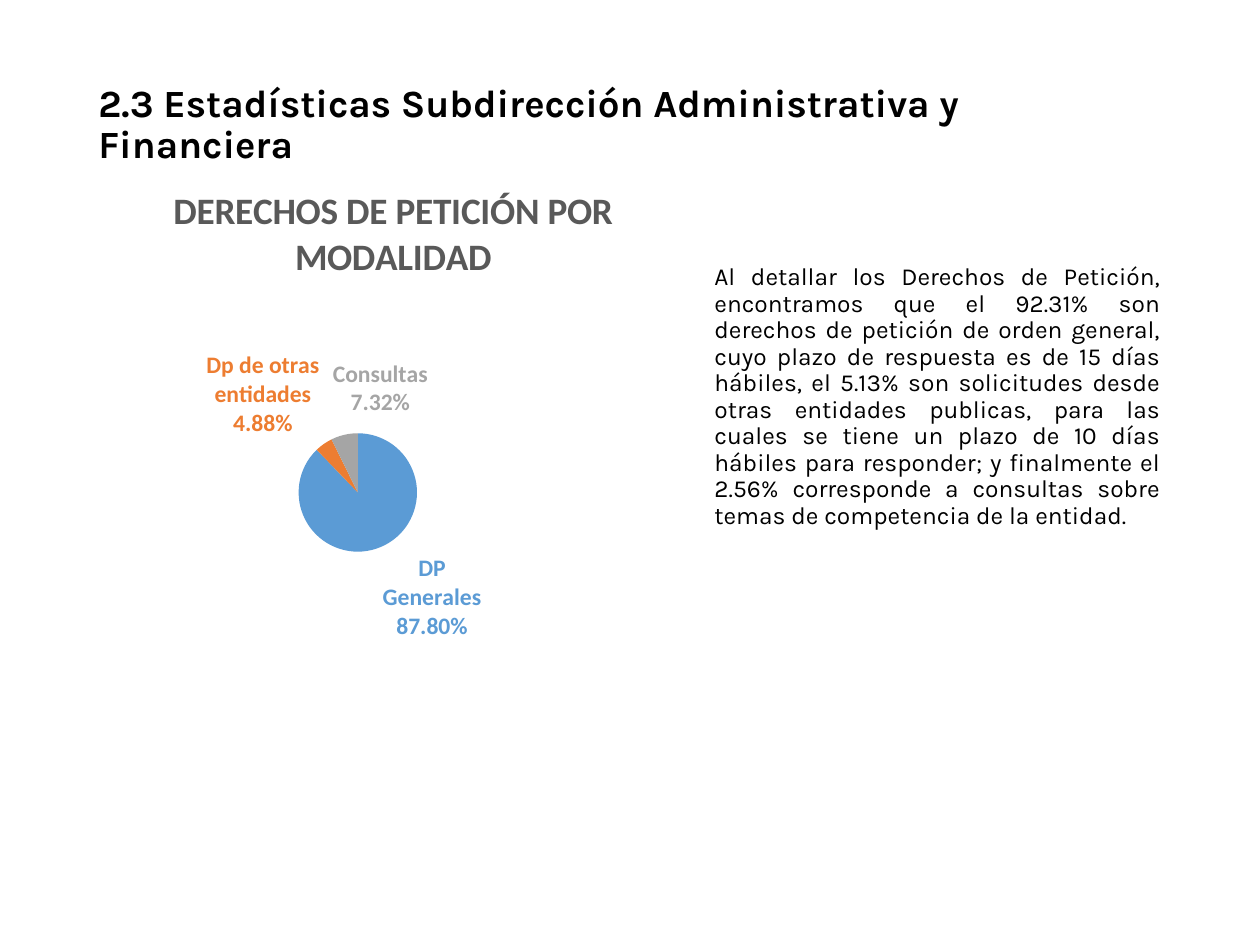
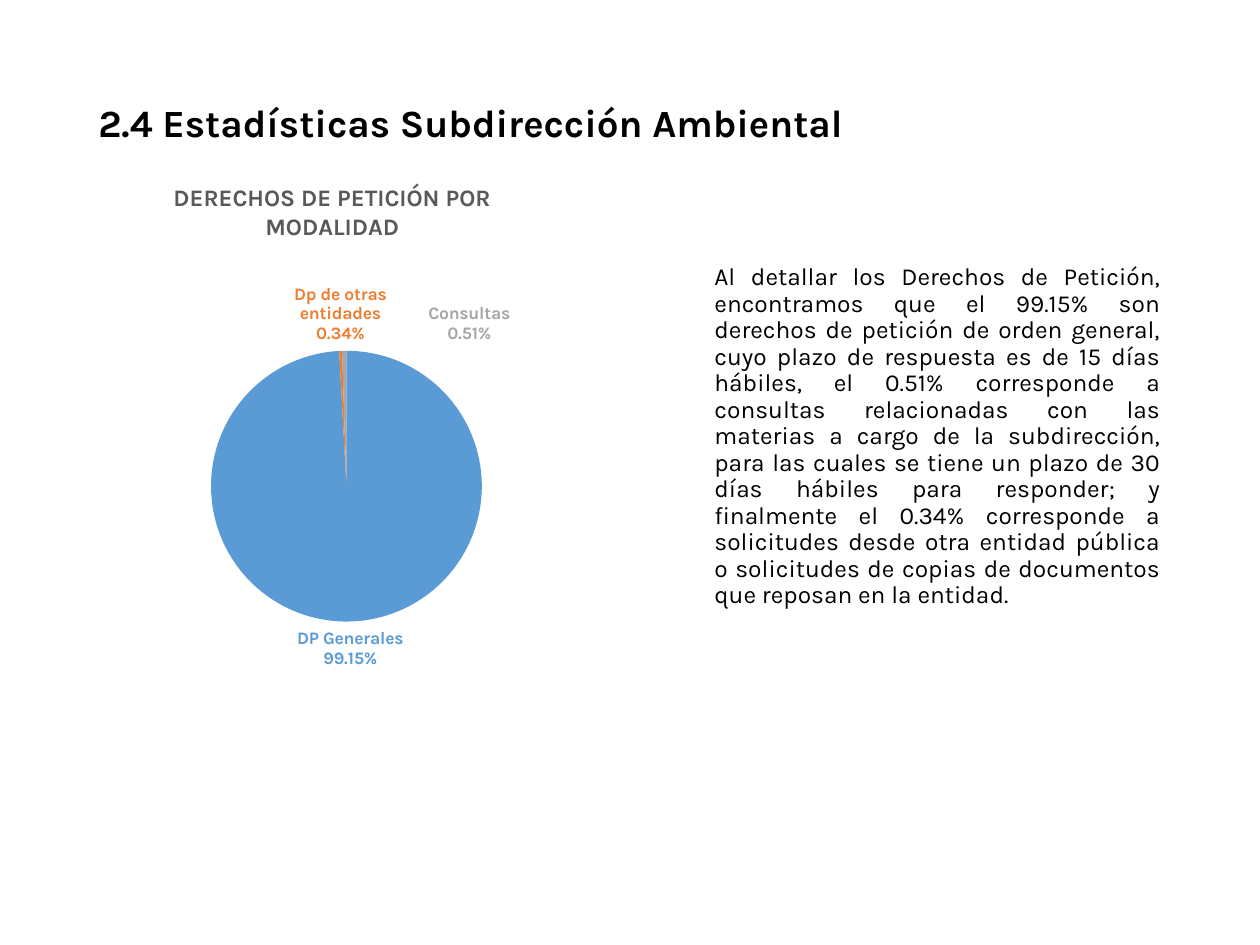
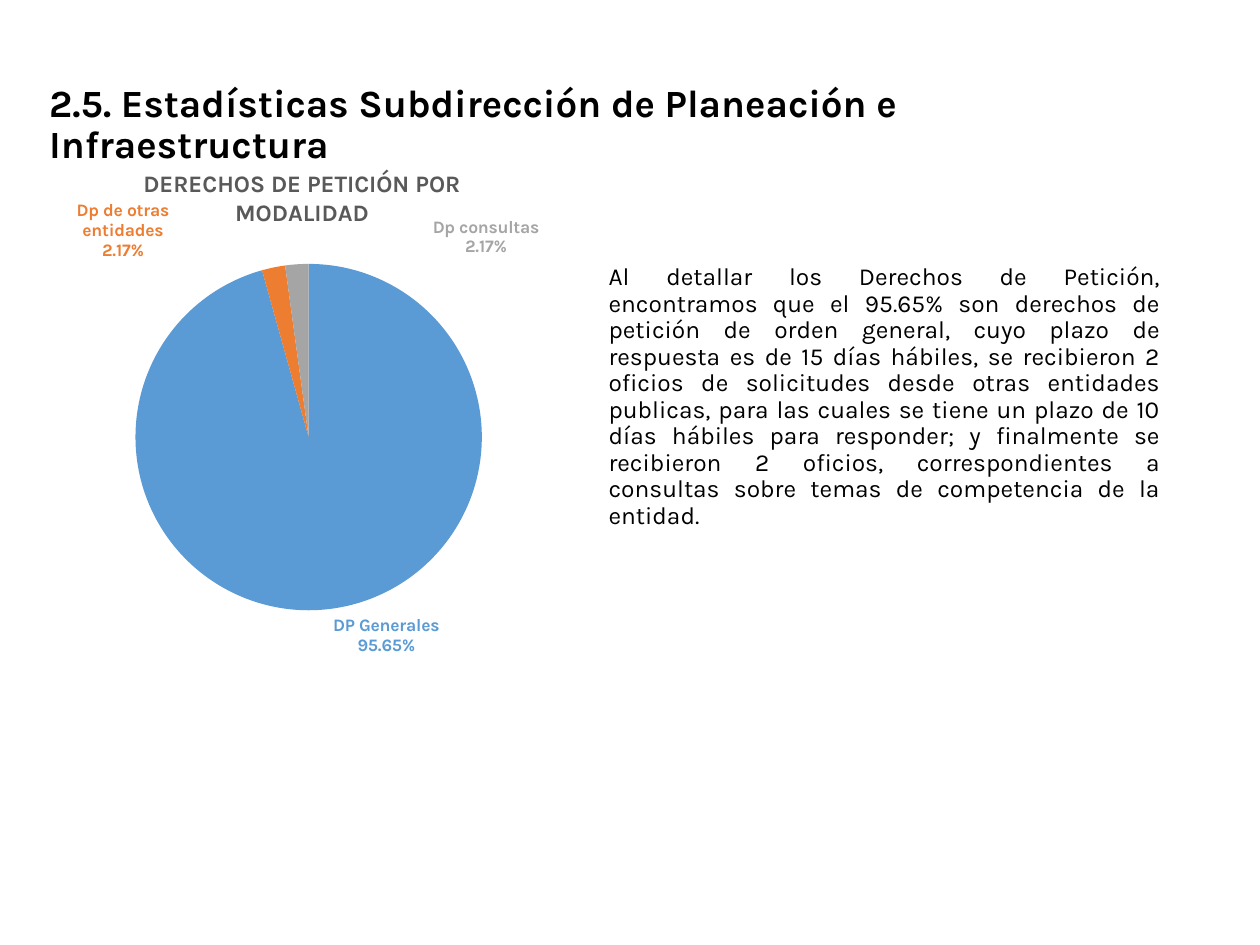
"""Build three slides of petition statistics, each with a pie chart and a comment."""
from lxml.etree import SubElement
from pptx import Presentation
from pptx.chart.data import CategoryChartData
from pptx.dml.color import RGBColor
from pptx.enum.chart import XL_CHART_TYPE, XL_LABEL_POSITION
from pptx.enum.text import MSO_ANCHOR, MSO_AUTO_SIZE, PP_ALIGN
from pptx.oxml import parse_xml
from pptx.oxml.ns import nsdecls, qn
from pptx.util import Inches, Pt

BLACK = "000000"
TITLE_GRAY = "595959"
SLICE_COLORS = ["5B9BD5", "ED7D31", "A5A5A5"]
FONT = "Karla"
CHART_TITLE = ["DERECHOS DE PETICIÓN POR", "MODALIDAD"]
GENERAL, ENTITIES = "DP Generales", "Dp de otras entidades"

SLIDES = [
    {
        "title": "2.3 Estadísticas Subdirección Administrativa y Financiera",
        "title_box": (0.68, 0.62, 8.62, 0.75),
        "body": "Al detallar los Derechos de Petición, encontramos que el 92.31% son derechos "
                "de petición de orden general, cuyo plazo de respuesta es de 15 días hábiles, "
                "el 5.13% son solicitudes desde otras entidades publicas, para las cuales se "
                "tiene un plazo de 10 días hábiles para responder; y finalmente el 2.56% "
                "corresponde a consultas sobre temas de competencia de la entidad.",
        "body_box": (5.57, 1.37, 3.74, 3.52),
        "chart": {
            "box": (0.49, 1.41, 4.51, 4.03),
            "shares": {GENERAL: 87.8, ENTITIES: 4.88, "Consultas": 7.32},
            "center": (2.84, 3.91),
            "diameter": 0.94,
            "label_shifts": {2: (0.15, -0.02)},
            "font": "Calibri",
            "title_size": 21.3,
            "label_size": 13.5,
            "title_top": 0.01,
        },
    },
    {
        "title": "2.4 Estadísticas Subdirección Ambiental",
        "title_box": (0.68, 0.62, 8.62, 0.75),
        "body": "Al detallar los Derechos de Petición, encontramos que el 99.15% son derechos "
                "de petición de orden general, cuyo plazo de respuesta es de 15 días hábiles, "
                "el 0.51% corresponde a consultas relacionadas con las materias a cargo de la "
                "subdirección, para las cuales se tiene un plazo de 30 días hábiles para "
                "responder; y finalmente el 0.34% corresponde a solicitudes desde otra entidad "
                "pública o solicitudes de copias de documentos que reposan en la entidad.",
        "body_box": (5.57, 1.37, 3.74, 3.52),
        "chart": {
            "box": (0.49, 1.41, 4.51, 4.03),
            "shares": {GENERAL: 99.15, ENTITIES: 0.34, "Consultas": 0.51},
            "center": (2.75, 3.86),
            "diameter": 2.15,
            "label_shifts": {2: (0.22, 0)},
        },
    },
    {
        "title": "2.5. Estadísticas Subdirección de Planeación e Infraestructura",
        "title_box": (0.29, 0.62, 9.02, 0.75),
        "body": "Al detallar los Derechos de Petición, encontramos que el 95.65% son derechos "
                "de petición de orden general, cuyo plazo de respuesta es de 15 días hábiles, "
                "se recibieron 2 oficios de solicitudes desde otras entidades publicas, para "
                "las cuales se tiene un plazo de 10 días hábiles para responder; y finalmente "
                "se recibieron 2 oficios, correspondientes a consultas sobre temas de "
                "competencia de la entidad.",
        "body_box": (4.73, 1.37, 4.58, 3.52),
        "chart": {
            "box": (0.29, 1.3, 4.3, 4.03),
            "shares": {GENERAL: 95.65, ENTITIES: 2.17, "Dp consultas": 2.17},
            "center": (2.45, 3.47),
            "diameter": 2.75,
            "label_shifts": {1: (-0.19, 0), 2: (0.35, 0)},
        },
    },
]


def color(value):
    """Turn a hex string into a colour."""
    return RGBColor.from_string(value)


def format_font(font, size, name=FONT, fill=BLACK, bold=False):
    """Set the size, face, colour and weight of a font."""
    font.size = Pt(size)
    font.name = name
    font.bold = bold
    font.color.rgb = color(fill)


def write_text(shape, text, box, size, bold=False, align=PP_ALIGN.LEFT,
               anchor=MSO_ANCHOR.TOP, margin_top=0.05):
    """Move a placeholder and fill it with one formatted paragraph."""
    shape.left, shape.top, shape.width, shape.height = map(Inches, box)
    frame = shape.text_frame
    frame.word_wrap = True
    frame.auto_size = MSO_AUTO_SIZE.NONE
    frame.vertical_anchor = anchor
    frame.margin_top = Inches(margin_top)
    paragraph = frame.paragraphs[0]
    properties = paragraph._p.get_or_add_pPr()
    properties.set("marL", "0")
    properties.set("indent", "0")
    SubElement(properties, qn("a:buNone"))
    paragraph.alignment = align
    paragraph.line_spacing = 0.9
    paragraph.space_before = Pt(0)
    run = paragraph.add_run()
    run.text = text
    format_font(run.font, size, bold=bold)


def manual_layout(target=None, mode=None, **values):
    """Return a chart layout element with the given fractions."""
    layout = parse_xml(f"<c:layout {nsdecls('c')}><c:manualLayout/></c:layout>")
    if target:
        SubElement(layout[0], qn("c:layoutTarget"), val=target)
    if mode:
        for name in ("xMode", "yMode"):
            SubElement(layout[0], qn(f"c:{name}"), val=mode)
    for name, value in values.items():
        SubElement(layout[0], qn(f"c:{name}"), val=f"{value:.4f}")
    return layout


def replace_layout(parent, layout, before):
    """Put a layout into a chart element ahead of the named child."""
    for old_layout in parent.findall(qn("c:layout")):
        parent.remove(old_layout)
    parent.find(qn(before)).addprevious(layout)


def add_chart_title(chart, font, size, top):
    """Write the two-line chart title and place it."""
    chart.has_title = True
    frame = chart.chart_title.text_frame
    for index, line in enumerate(CHART_TITLE):
        paragraph = frame.paragraphs[0] if index == 0 else frame.add_paragraph()
        run = paragraph.add_run()
        run.text = line
        format_font(run.font, size, name=font, fill=TITLE_GRAY, bold=True)
    chart.chart_title.include_in_layout = False
    replace_layout(chart.chart_title._element, manual_layout(mode="edge", x=0.19, y=top),
                   "c:overlay")


def format_slice(series, index, fill, font, size, shift):
    """Colour one slice and its category and share label."""
    point = series.points[index]
    point.format.fill.solid()
    point.format.fill.fore_color.rgb = color(fill)
    label = point.data_label
    format_font(label.font, size, name=font, fill=fill, bold=True)
    label.position = XL_LABEL_POSITION.OUTSIDE_END
    element = series._element.find(qn("c:dLbls")).findall(qn("c:dLbl"))[index]
    element.find(qn("c:showCatName")).set("val", "1")
    SubElement(element, qn("c:separator")).text = "\n"
    number_format = parse_xml(f"<c:numFmt {nsdecls('c')} sourceLinked='0'/>")
    number_format.set("formatCode", '0.00"%"')
    element[0].addnext(number_format)
    if shift:
        element[0].addnext(manual_layout(x=shift[0], y=shift[1]))


def add_pie(slide, box, shares, center, diameter, label_shifts,
            font=FONT, title_size=13.5, label_size=10, title_top=0):
    """Add a pie chart whose circle has a given centre and diameter in inches."""
    data = CategoryChartData()
    data.categories = list(shares)
    data.add_series("Series 1", list(shares.values()))
    chart = slide.shapes.add_chart(XL_CHART_TYPE.PIE, *map(Inches, box), data).chart
    chart.has_legend = False
    format_font(chart.font, 10, name="Calibri")
    add_chart_title(chart, font, title_size, title_top)
    plot = chart.plots[0]
    plot.vary_by_categories = True
    series = plot.series[0]
    for index, fill in enumerate(SLICE_COLORS):
        format_slice(series, index, fill, font, label_size, label_shifts.get(index))
    for leader_lines in series._element.iter(qn("c:showLeaderLines")):
        leader_lines.set("val", "0")
    left, top, width, height = box
    layout = manual_layout(
        "inner",
        "edge",
        x=(center[0] - diameter / 2 - left) / width,
        y=(center[1] - diameter / 2 - top) / height,
        w=diameter / width,
        h=diameter / height,
    )
    plot_area = chart._chartSpace.chart.plotArea
    replace_layout(plot_area, layout, "c:pieChart")


def add_statistics_slide(presentation, content):
    """Add a slide with a title, a justified comment and a pie chart."""
    slide = presentation.slides.add_slide(presentation.slide_layouts[1])
    title, body = slide.placeholders
    write_text(title, content["title"], content["title_box"], 22, bold=True,
               anchor=MSO_ANCHOR.MIDDLE)
    write_text(body, content["body"], content["body_box"], 14, align=PP_ALIGN.JUSTIFY,
               margin_top=0.73)
    add_pie(slide, **content["chart"])


def main():
    """Build and save the presentation."""
    presentation = Presentation()
    presentation.slide_width = Inches(10)
    presentation.slide_height = Inches(7.5)
    for content in SLIDES:
        add_statistics_slide(presentation, content)
    presentation.save("out.pptx")


if __name__ == "__main__":
    main()
